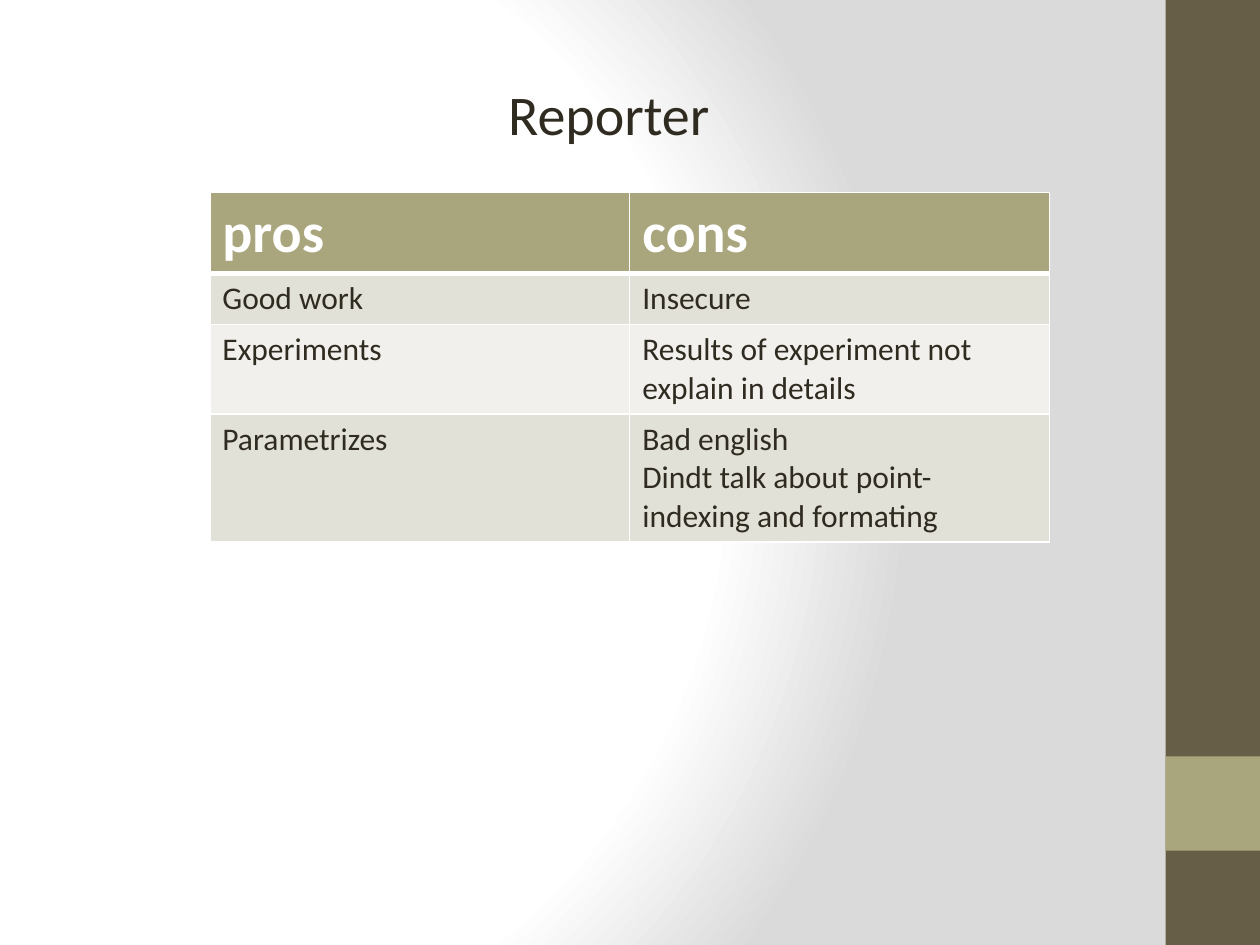
from lxml import etree
from pptx import Presentation
from pptx.dml.color import RGBColor
from pptx.enum.shapes import MSO_SHAPE
from pptx.enum.text import MSO_AUTO_SIZE, PP_ALIGN
from pptx.oxml.ns import qn
from pptx.util import Cm, Pt

RECTANGLE = MSO_SHAPE.RECTANGLE
CENTER = PP_ALIGN.CENTER
GROW = MSO_AUTO_SIZE.SHAPE_TO_FIT_TEXT

FONT = "Calibri"
COLORS = {
    "white": "FFFFFF",
    "shade": "DADADA",
    "text": "2F2B20",
    "bar": "675E47",
    "accent": "A9A57C",
    "band_dark": "E2E1D7",
    "band_light": "F1F0EC",
}

# One row per entry; each cell is a list of paragraphs
REVIEW = [
    [["pros"], ["cons"]],
    [["Good work"], ["Insecure"]],
    [["Experiments"], ["Results of experiment not explain in details"]],
    [["Parametrizes"],
     ["Bad english", "Dindt talk about point-indexing and formating"]],
]


def rgb(name):
    return RGBColor.from_string(COLORS[name])


def add_child(parent, tag, **attributes):
    child = etree.SubElement(parent, qn(tag))
    for key, value in attributes.items():
        child.set(key, str(value))
    return child


def add_run(paragraph, text, size, color, bold=False):
    run = paragraph.add_run()
    run.text = text
    run.font.name = FONT
    run.font.size = Pt(size)
    run.font.bold = bold
    run.font.color.rgb = rgb(color)


def set_background(slide):
    """Radial fade from white to grey."""
    slide.background.fill.gradient()
    fade = slide.element.find(".//" + qn("a:gradFill"))
    for child in list(fade):
        fade.remove(child)
    stops = add_child(fade, "a:gsLst")
    for percent, color in [(0, "white"), (75, "white"), (100, "shade")]:
        stop = add_child(stops, "a:gs", pos=percent * 1000)
        add_child(stop, "a:srgbClr", val=COLORS[color])
    circle = add_child(fade, "a:path", path="circle")
    add_child(circle, "a:fillToRect", l=20000, t=50000, r=100000, b=50000)


def add_side_bar(slide, left, top, width, height):
    """Dark bar with a square accent, one accent height above the bottom."""
    accent_top = top + height - 2 * width
    for y, part_height, color in [(top, height, "bar"),
                                  (accent_top, width, "accent")]:
        part = slide.shapes.add_shape(RECTANGLE, left, y, width, part_height)
        part.shadow.inherit = False
        part.fill.solid()
        part.fill.fore_color.rgb = rgb(color)
        part.line.fill.background()


def set_borders(cell, top, bottom):
    properties = cell._tc.get_or_add_tcPr()
    for side, points in [("L", 1), ("R", 1), ("T", top), ("B", bottom)]:
        line = add_child(properties, "a:ln" + side, w=Pt(points))
        fill = add_child(line, "a:solidFill")
        add_child(fill, "a:srgbClr", val=COLORS["white"])


def add_review_table(slide, left, top, width, row_height):
    row_count, column_count = len(REVIEW), len(REVIEW[0])
    table = slide.shapes.add_table(row_count, column_count, left, top, width,
                                   row_height * row_count).table
    for r, row in enumerate(REVIEW):
        is_header = r == 0
        band = "band_dark" if r % 2 else "band_light"
        for c, lines in enumerate(row):
            cell = table.cell(r, c)
            set_borders(cell, top=3 if r == 1 else 1,
                        bottom=3 if is_header else 1)
            cell.fill.solid()
            cell.fill.fore_color.rgb = rgb("accent" if is_header else band)
            frame = cell.text_frame
            for i, line in enumerate(lines):
                paragraph = frame.add_paragraph() if i else frame.paragraphs[0]
                if is_header:
                    add_run(paragraph, line, 32, "white", bold=True)
                else:
                    add_run(paragraph, line, 18, "text")


def add_title(slide, left, top, width, height):
    frame = slide.shapes.add_textbox(left, top, width, height).text_frame
    frame.word_wrap = True
    frame.auto_size = GROW
    heading = frame.paragraphs[0]
    heading.alignment = CENTER
    add_run(heading, "Reporter", 32, "text")


def main():
    deck = Presentation()
    deck.slide_width, deck.slide_height = Cm(25.4), Cm(19.05)
    slide = deck.slides.add_slide(deck.slide_layouts[6])

    set_background(slide)
    bar_width = Cm(1.9)
    add_side_bar(slide, deck.slide_width - bar_width, 0, bar_width,
                 deck.slide_height)
    add_review_table(slide, Cm(4.23), Cm(3.88), Cm(16.93), Cm(1.03))
    add_title(slide, Cm(2.75), Cm(1.47), Cm(19.05), Cm(1.62))

    deck.save("out.pptx")


if __name__ == "__main__":
    main()
